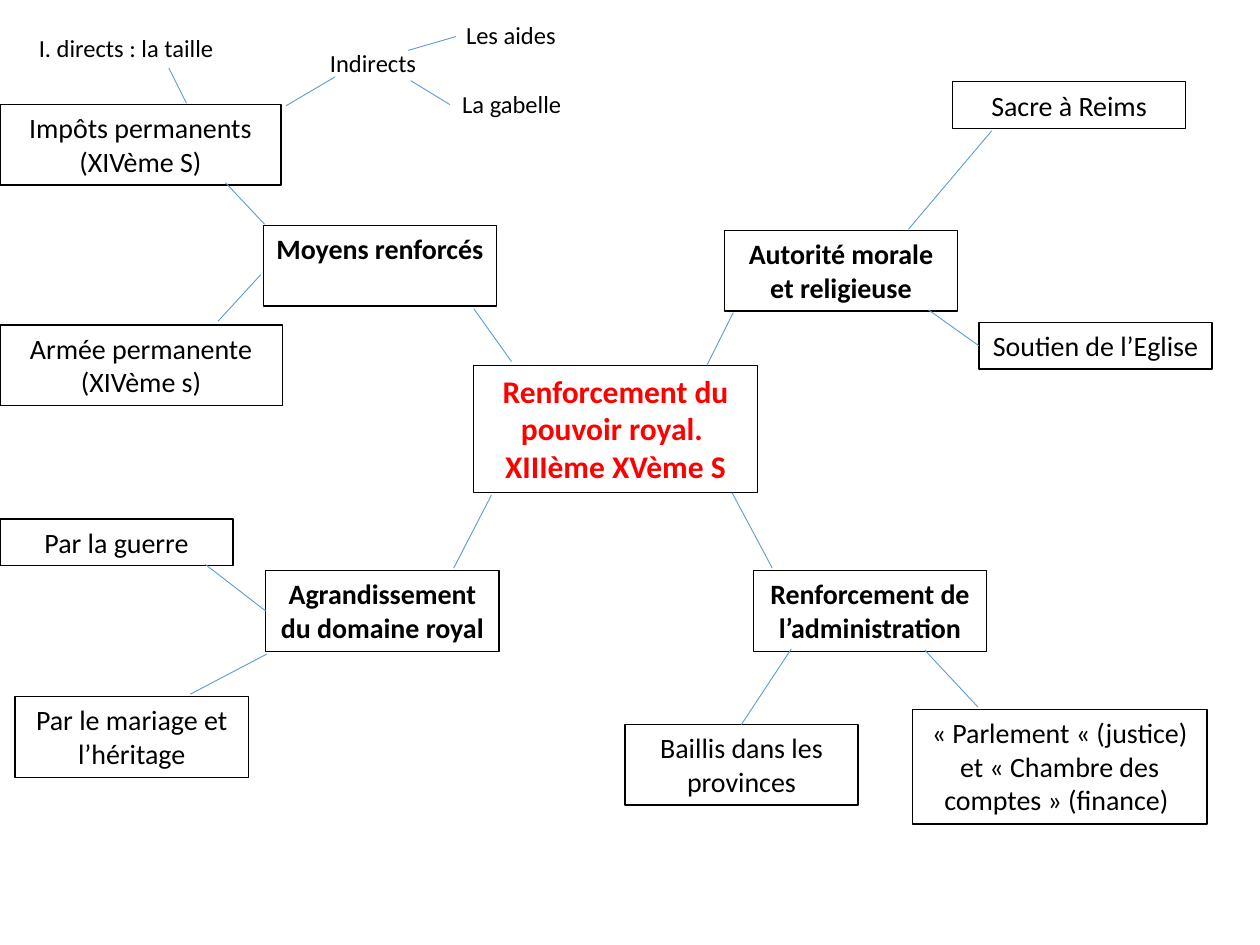
from dataclasses import dataclass

from lxml.etree import SubElement
from pptx import Presentation
from pptx.dml.color import RGBColor
from pptx.enum.shapes import MSO_CONNECTOR, MSO_SHAPE
from pptx.enum.text import MSO_ANCHOR, PP_ALIGN
from pptx.oxml.ns import qn
from pptx.util import Inches, Pt


@dataclass(frozen=True)
class Theme:
    font: str = "Calibri"
    ink: RGBColor = RGBColor(0x00, 0x00, 0x00)
    accent: RGBColor = RGBColor(0xFF, 0x00, 0x00)
    link: RGBColor = RGBColor(0x5B, 0x9B, 0xD5)
    title_size: int = 18
    box_size: int = 16
    note_size: int = 14
    border: float = 0.75
    link_width: float = 0.5


THEME = Theme()
COLS, ROWS = 100, 75  # grid of square cells
CELL = Inches(10) / COLS
W, H1, H2, H3 = 18.5, 3.7, 6.4, 9.1  # box width; heights for 1, 2 and 3 lines


def cells(*values):
    return [round(v * CELL) for v in values]


def place(origin, x, y):
    return cells(origin[0] + x, origin[1] + y)


def write(tf, text, size, color, bold=False, align=PP_ALIGN.CENTER):
    tf.text = text
    tf.vertical_anchor = MSO_ANCHOR.TOP
    for p in tf.paragraphs:
        p.alignment = align
        for r in p.runs:
            r.font.name = THEME.font
            r.font.size = Pt(size)
            r.font.bold = bold
            r.font.color.rgb = color


def add_box(s, origin, x, y, w, h, text, size=THEME.box_size,
            color=THEME.ink, bold=False):
    sp = s.shapes.add_shape(MSO_SHAPE.RECTANGLE, *place(origin, x, y), *cells(w, h))
    sp.shadow.inherit = False
    sp.fill.background()
    sp.line.color.rgb = THEME.ink
    sp.line.width = Pt(THEME.border)
    sp.text_frame.word_wrap = True
    write(sp.text_frame, text, size, color, bold)
    return sp


def add_note(s, origin, x, y, w, h, text):
    sp = s.shapes.add_textbox(*place(origin, x, y), *cells(w, h))
    sp.text_frame.word_wrap = False
    write(sp.text_frame, text, THEME.note_size, THEME.ink, align=PP_ALIGN.LEFT)


def add_link(s, origin, start, end, boxes):
    """An end is a grid point, or a box's text with the side to join."""
    joined = [isinstance(e[0], str) for e in (start, end)]
    points = [place(origin, 0, 0) if j else place(origin, *e)
              for j, e in zip(joined, (start, end))]
    ln = s.shapes.add_connector(MSO_CONNECTOR.STRAIGHT, *points[0], *points[1])
    if joined[0]:
        ln.begin_connect(boxes[start[0]], start[1])
    if joined[1]:
        ln.end_connect(boxes[end[0]], end[1])
    ln.line.color.rgb = THEME.link
    ln.line.width = Pt(THEME.link_width)
    SubElement(ln._element.spPr, qn("a:effectLst"))


def add_centre(s, origin):
    add_box(s, origin, 1.6, 4.5, 22.5, 10.1,
            "Renforcement du pouvoir royal. \nXIIIème XVème S",
            THEME.title_size, THEME.accent, True)
    for start, end in (((3, 14.8), (0, 20.6)), ((4.6, 4.2), (1.6, 0)),
                       ((20.1, 4.5), (22.2, 0.3)), ((22.1, 14.6), (25.3, 20.6))):
        add_link(s, origin, start, end, {})


def add_branch(s, origin, topic, leaves, links, notes=()):
    x, y, text = topic
    boxes = {text: add_box(s, origin, x, y, W, H2, text, bold=True)}
    for leaf in leaves:
        boxes[leaf[-1]] = add_box(s, origin, *leaf)
    for note in notes:
        add_note(s, origin, *note)
    for start, end in links:
        add_link(s, origin, start, end, boxes)


# Each branch: origin of its region, then parts relative to that origin
BRANCHES = [
    dict(  # means, with the kinds of tax
        origin=(0, 0),
        topic=(20.9, 17.9, "Moyens renforcés"),
        leaves=[(0, 25.8, 22.4, H2, "Armée permanente (XIVème s)"),
                (0, 8.3, 22.3, H2, "Impôts permanents (XIVème S)")],
        notes=[(2.1, 2.1, 16, 3.4, "I. directs : la taille"),
               (36, 1.1, 9.2, 3.4, "Les aides"),
               (35.7, 6.6, 10, 3.4, "La gabelle"),
               (25.2, 3.3, 8.9, 3.4, "Indirects")],
        links=[((21, 17.8), (17.9, 14.5)), ((20.7, 21.8), (17.3, 25.5)),
               ((14.8, 8.2), (13.4, 5.4)), ((22.7, 8.4), (26.6, 6.1)),
               ((32.4, 4), (36.2, 2.9)), ((32.6, 6.4), (35.7, 8.3))]),
    dict(  # moral and religious authority
        origin=(56, 6),
        topic=(1.5, 12.3, "Autorité morale et religieuse"),
        leaves=[(19.6, 0.5, W, H1, "Sacre à Reims"),
                (21.7, 19.6, W, H1, "Soutien de l’Eglise")],
        links=[((16.1, 12.2), (22.7, 4.4)),
               ((17.7, 18.6), ("Soutien de l’Eglise", 1))]),
    dict(  # growth of the royal domain
        origin=(0, 41),
        topic=(21.1, 4.3, "Agrandissement du domaine royal"),
        leaves=[(1.2, 14.3, W, H2, "Par le mariage et l’héritage"),
                (0, 0.2, W, H1, "Par la guerre")],
        links=[(("Agrandissement du domaine royal", 1), (16.3, 3.8)),
               ((21.2, 10.9), (15.1, 14.1))]),
    dict(  # administration
        origin=(49, 45),
        topic=(10.8, 0.3, "Renforcement de l’administration"),
        leaves=[(0.6, 12.5, W, H2, "Baillis dans les provinces"),
                (23.4, 11.3, 23.4, H3,
                 "« Parlement « (justice) et « Chambre des comptes » (finance) ")],
        links=[((13.8, 6.5), ("Baillis dans les provinces", 0)),
               ((24.4, 6.6), (28.6, 11.1))]),
]


def main():
    prs = Presentation()
    prs.slide_width, prs.slide_height = cells(COLS, ROWS)
    s = prs.slides.add_slide(prs.slide_layouts[6])
    add_centre(s, (36, 24.5))
    for branch in BRANCHES:
        add_branch(s, **branch)
    prs.save("out.pptx")


if __name__ == "__main__":
    main()
